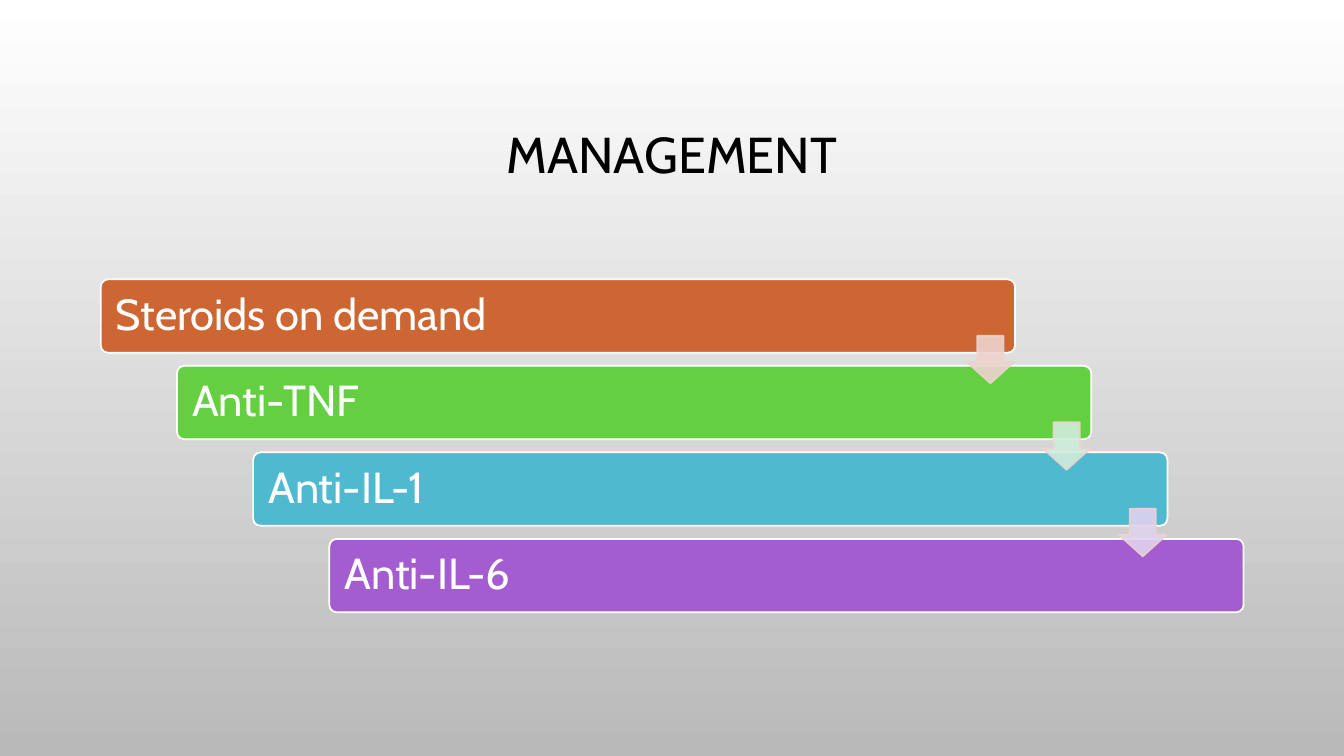
from lxml.etree import SubElement
from pptx import Presentation
from pptx.dml.color import RGBColor
from pptx.enum.shapes import MSO_SHAPE as Kind
from pptx.enum.text import MSO_ANCHOR as Anchor, PP_ALIGN as Align
from pptx.oxml.ns import qn
from pptx.util import Cm, Pt


def paint(color, code, alpha=100):
    color.rgb = RGBColor.from_string(code)
    if alpha < 100:
        node = color._xFill.find(qn("a:srgbClr"))
        SubElement(node, qn("a:alpha")).set("val", str(alpha * 1000))


def write(frame, text, size, code, align):
    frame.word_wrap = True
    frame.vertical_anchor = Anchor.MIDDLE
    para = frame.paragraphs[0]
    para.alignment = align
    para.line_spacing = 0.9
    run = para.add_run()
    run.text = text
    run.font.size = Pt(size)
    run.font.name = "Cabin"
    paint(run.font.fill.fore_color if run.font.fill.solid() else run.font.color, code)


deck = Presentation()
deck.slide_width, deck.slide_height = Cm(33.87), Cm(19.05)
slide = deck.slides.add_slide(deck.slide_layouts[5])

back = slide.background.fill
back.gradient()
back.gradient_angle = 270
for stop, code in zip(back.gradient_stops, ["FFFFFF", "B9B9B9"]):
    paint(stop.color, code)

title = slide.shapes.title
title.left, title.top = Cm(2.54), Cm(1.73)
title.width, title.height = Cm(28.78), Cm(4.44)
write(title.text_frame, "MANAGEMENT", 36, "000000", Align.CENTER)

steps = [
    ("Steroids on demand", "CE6633"),
    ("Anti-TNF", "64CF41"),
    ("Anti-IL-1", "4FB9D0"),
    ("Anti-IL-6", "A35DD1"),
]
tints = ["EDD3CE", "D0EDDA", "E0D2EE"]
across, down = 1.92, 2.18

for i, (text, code) in enumerate(steps):
    bar = slide.shapes.add_shape(
        Kind.ROUNDED_RECTANGLE,
        Cm(2.54 + i * across), Cm(7.04 + i * down), Cm(23.04), Cm(1.85))
    bar.adjustments[0] = 0.1
    bar.shadow.inherit = False
    bar.fill.solid()
    paint(bar.fill.fore_color, code)
    paint(bar.line.color, "FFFFFF")
    bar.line.width = Pt(1.25)
    frame = bar.text_frame
    frame.margin_left = frame.margin_right = Cm(0.33)
    frame.margin_top = frame.margin_bottom = Cm(0.1)
    write(frame, text, 31, "FFFFFF", Align.LEFT)

for i, code in enumerate(tints):
    arrow = slide.shapes.add_shape(
        Kind.DOWN_ARROW,
        Cm(24.36 + i * across), Cm(8.46 + i * down), Cm(1.2), Cm(1.2))
    arrow.adjustments[0] = 0.55
    arrow.adjustments[1] = 0.45
    arrow.shadow.inherit = False
    arrow.fill.solid()
    paint(arrow.fill.fore_color, code, 90)
    paint(arrow.line.color, "EDD3CE", 90)
    arrow.line.width = Pt(1.25)

deck.save("out.pptx")
